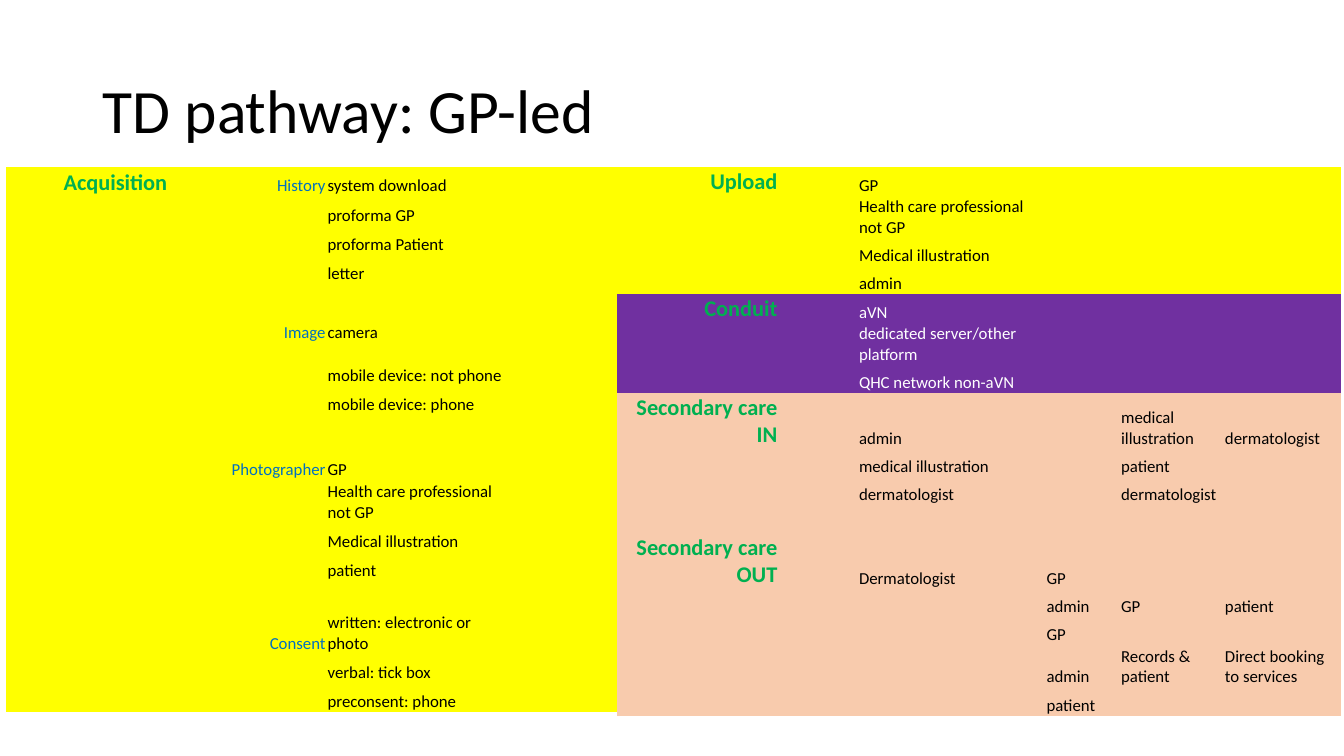
import pptx
import pptx.dml.color
import pptx.enum.text
import pptx.util

Inches = pptx.util.Inches
Pt = pptx.util.Pt
PP_ALIGN = pptx.enum.text.PP_ALIGN
ANCHOR = pptx.enum.text.MSO_ANCHOR

COLORS = {
    "yellow": "FFFF00", "purple": "7030A0", "peach": "F8CBAD",
    "heading": "00B050", "label": "0070C0", "black": "000000", "white": "FFFFFF",
}
PLAIN_TABLE_STYLE = "{2D5ABB26-0587-4C30-8999-92F81FD0307C}"


def set_font(p, size, color, bold=False):
    p.font.name = "Calibri"
    p.font.size = Pt(size)
    p.font.bold = bold
    p.font.color.rgb = pptx.dml.color.RGBColor.from_string(COLORS[color])


def add_pathway_table(left, widths, heights, rows, fills, label_col=None):
    """Add a borderless table with headings in column 0 and labels in label_col."""
    frame = s.shapes.add_table(len(rows), len(widths), Inches(left), Inches(1.66),
                               Inches(sum(widths)), Inches(sum(heights)))
    frame.element.xpath(".//a:tableStyleId")[0].text = PLAIN_TABLE_STYLE
    table = frame.table
    table.first_row = table.horz_banding = False
    for column, width in zip(table.columns, widths):
        column.width = Inches(width)
    for r, (height, texts, fill) in enumerate(zip(heights, rows, fills)):
        table.rows[r].height = Inches(height)
        for c in range(len(widths)):
            cell = table.cell(r, c)
            cell.fill.solid()
            cell.fill.fore_color.rgb = pptx.dml.color.RGBColor.from_string(COLORS[fill])
            cell.margin_left = cell.margin_right = cell.margin_top = Inches(0.01)
            cell.margin_bottom = 0
            cell.vertical_anchor = ANCHOR.BOTTOM
            text = texts[c] if c < len(texts) else ""
            p = cell.text_frame.paragraphs[0]
            if text:
                p.text = text
            if text and c == 0:
                set_font(p, 16, "heading", bold=True)
            elif c == label_col:
                set_font(p, 12, "label")
            else:
                set_font(p, 12, "white" if fill == "purple" else "black")
            if c in (0, label_col):
                p.alignment = PP_ALIGN.RIGHT


prs = pptx.Presentation()
prs.slide_width = Inches(13.33)
prs.slide_height = Inches(7.5)
s = prs.slides.add_slide(prs.slide_layouts[5])

title = s.shapes.title
title.left, title.top = Inches(0.92), Inches(0.4)
title.width, title.height = Inches(11.5), Inches(1.45)
tf = title.text_frame
tf.text = "TD pathway: GP-led"
tf.vertical_anchor = ANCHOR.MIDDLE
p = tf.paragraphs[0]
p.alignment = PP_ALIGN.LEFT
p.line_spacing = 0.9
set_font(p, 44, "black")

acquisition_rows = [
    ("Acquisition", "History", "system download"),
    ("", "", "proforma GP"),
    ("", "", "proforma Patient"),
    ("", "", "letter"),
    (),
    ("", "Image", "camera"),
    ("", "", "mobile device: not phone"),
    ("", "", "mobile device: phone"),
    (),
    ("", "Photographer", "GP"),
    ("", "", "Health care professional not GP"),
    ("", "", "Medical illustration"),
    ("", "", "patient"),
    (),
    ("", "Consent", "written: electronic or photo"),
    ("", "", "verbal: tick box"),
    ("", "", "preconsent: phone"),
]
acquisition_heights = [0.29] * len(acquisition_rows)
for tall_row in (6, 10, 14):
    acquisition_heights[tall_row] = 0.43
acquisition_heights[8] = 0.35
add_pathway_table(0.06, [1.61, 1.57, 1.75, 0.5, 0.65], acquisition_heights,
                  acquisition_rows, ["yellow"] * len(acquisition_rows), label_col=1)

referral_rows = [
    ("Upload", "", "GP"),
    ("", "", "Health care professional not GP"),
    ("", "", "Medical illustration"),
    ("", "", "admin"),
    ("Conduit", "", "aVN"),
    ("", "", "dedicated server/other platform"),
    ("", "", "QHC network non-aVN"),
    ("Secondary care IN", "", "admin", "", "medical illustration", "dermatologist"),
    ("", "", "medical illustration", "", "patient"),
    ("", "", "dermatologist", "", "dermatologist"),
    (),
    ("Secondary care OUT", "", "Dermatologist", "GP"),
    ("", "", "", "admin", "GP", "patient"),
    ("", "", "", "GP"),
    ("", "", "", "admin", "Records & patient", "Direct booking to services"),
    ("", "", "", "patient"),
]
referral_heights = [0.28] * len(referral_rows)
referral_heights[5] = 0.41
for heading_row in (7, 11):
    referral_heights[heading_row] = 0.54
add_pathway_table(6.12, [1.6, 0.79, 1.86, 0.74, 1.03, 1.16], referral_heights,
                  referral_rows, ["yellow"] * 4 + ["purple"] * 3 + ["peach"] * 9)

prs.save("out.pptx")
